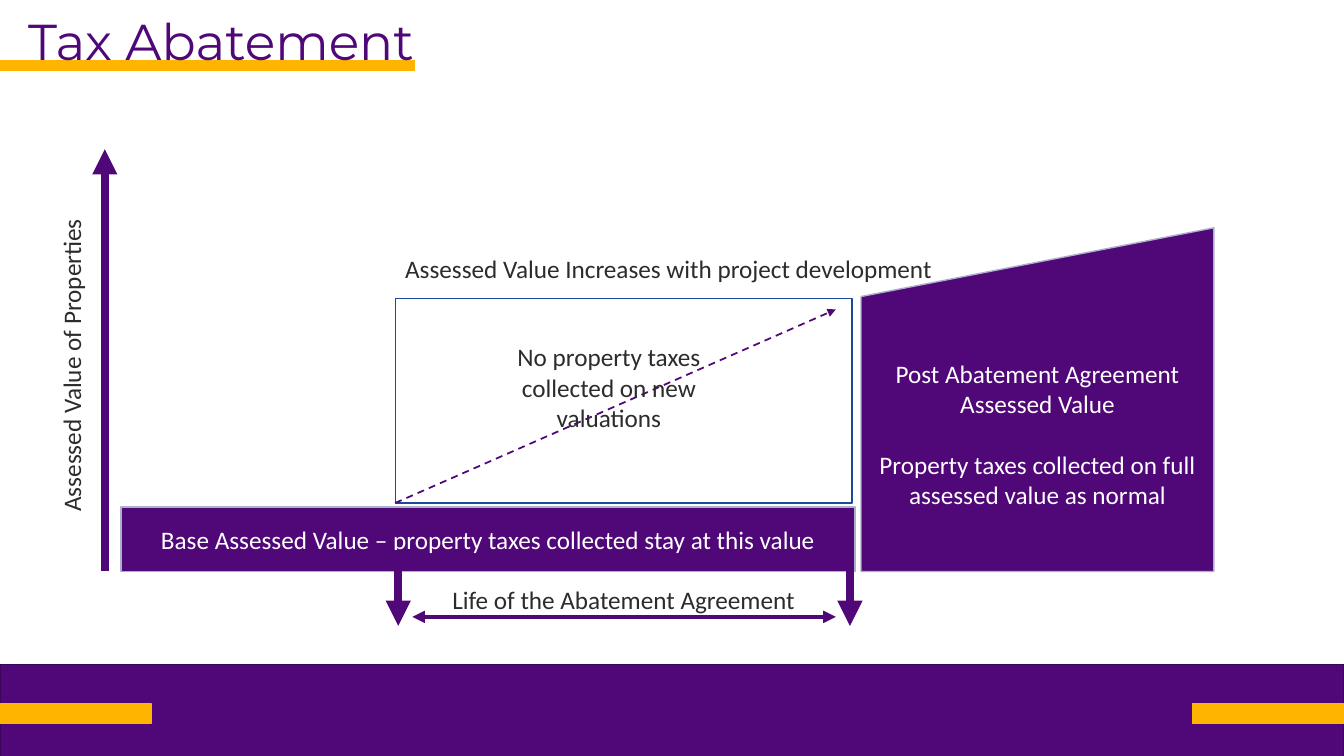
from dataclasses import dataclass

from lxml.etree import SubElement
from pptx import Presentation
from pptx.dml.color import RGBColor
from pptx.enum.dml import MSO_LINE
from pptx.enum.shapes import MSO_CONNECTOR, MSO_SHAPE
from pptx.enum.text import MSO_ANCHOR, PP_ALIGN
from pptx.oxml.ns import qn
from pptx.util import Inches, Pt


@dataclass(frozen=True)
class Theme:
    """Colours, fonts and type sizes of the slide."""

    purple: str = "500778"
    dark_purple: str = "3B0559"
    gold: str = "FFB500"
    pale_blue: str = "ABB1CC"
    blue: str = "1B499E"
    ink: str = "2C2C2C"
    white: str = "FFFFFF"
    title_font: str = "Montserrat"
    body_font: str = "Calibri"
    title_size: int = 36
    body_size: int = 18


class SlideBuilder:
    """Draws styled elements on one slide."""

    def __init__(self, slide, theme):
        """Keep the slide and its theme."""
        self.slide = slide
        self.theme = theme

    def set_text(self, text_frame, lines, color, align, font=None, size=None):
        """Fill a text frame with evenly styled paragraphs."""
        text_frame.word_wrap = True
        text_frame.text = "\n".join(lines)
        for paragraph in text_frame.paragraphs:
            paragraph.alignment = align
            for run in paragraph.runs:
                run.font.name = font or self.theme.body_font
                run.font.size = Pt(size or self.theme.body_size)
                run.font.color.rgb = RGBColor.from_string(color)

    def block(self, box, fill, line, lines=(), kind=MSO_SHAPE.RECTANGLE):
        """Add a preset shape with optional centred white text."""
        shape = self.slide.shapes.add_shape(kind, *map(Inches, box))
        shape.shadow.inherit = False
        if fill:
            shape.fill.solid()
            shape.fill.fore_color.rgb = RGBColor.from_string(fill)
        else:
            shape.fill.background()
        shape.line.color.rgb = RGBColor.from_string(line)
        shape.line.width = Pt(1)
        if lines:
            shape.text_frame.vertical_anchor = MSO_ANCHOR.MIDDLE
            self.set_text(shape.text_frame, lines, self.theme.white, PP_ALIGN.CENTER)
        return shape

    def label(self, box, text, align=PP_ALIGN.LEFT, rotation=0):
        """Add a body text box."""
        shape = self.slide.shapes.add_textbox(*map(Inches, box))
        shape.rotation = rotation
        self.set_text(shape.text_frame, [text], self.theme.ink, align)

    def title(self, box, text):
        """Add the slide heading."""
        shape = self.slide.shapes.add_textbox(*map(Inches, box))
        self.set_text(shape.text_frame, [text], self.theme.purple, PP_ALIGN.LEFT,
                      self.theme.title_font, self.theme.title_size)
        shape.text_frame.paragraphs[0].line_spacing = 0.9

    def arrow(self, start, end, width, dashed=False, both_ends=False):
        """Add a straight purple arrow."""
        connector = self.slide.shapes.add_connector(
            MSO_CONNECTOR.STRAIGHT, *map(Inches, (*start, *end)))
        connector.line.color.rgb = RGBColor.from_string(self.theme.purple)
        connector.line.width = Pt(width)
        if dashed:
            connector.line.dash_style = MSO_LINE.DASH
        properties = connector._element.spPr
        outline = properties.find(qn("a:ln"))
        for tag in ("a:headEnd", "a:tailEnd") if both_ends else ("a:tailEnd",):
            SubElement(outline, qn(tag), type="triangle")
        SubElement(properties, qn("a:effectLst"))


def main():
    """Build and save the tax abatement slide."""
    presentation = Presentation()
    presentation.slide_width = Inches(13.33)
    presentation.slide_height = Inches(7.5)
    slide = presentation.slides.add_slide(presentation.slide_layouts[6])
    theme = Theme()
    builder = SlideBuilder(slide, theme)

    builder.block((0, 6.59, 13.33, 0.98), theme.purple, theme.dark_purple)
    for accent in ((0, 6.98, 1.5, 0.2), (11.83, 6.98, 1.5, 0.2), (0, 0.6, 4.11, 0.1)):
        builder.block(accent, theme.gold, theme.gold)
    builder.title((0.18, 0.12, 11.5, 1.13), "Tax Abatement")

    builder.block((1.2, 5.03, 7.28, 0.64), theme.purple, theme.pale_blue,
                  ["Base Assessed Value – property taxes collected stay at this value"])
    builder.block((3.92, 2.96, 4.53, 2.03), None, theme.blue)
    post_abatement = builder.block(
        (8.54, 2.26, 3.5, 3.41), theme.purple, theme.pale_blue,
        ["Post Abatement Agreement Assessed Value",
         "Property taxes collected on full assessed value as normal"],
        MSO_SHAPE.FLOWCHART_MANUAL_INPUT)
    post_abatement.text_frame.paragraphs[1].space_before = Pt(22)

    builder.arrow((1.04, 5.66), (1.04, 1.48), 6)
    builder.label((-1.02, 3.25, 3.45, 0.4), "Assessed Value of Properties", rotation=270)
    builder.label((3.92, 2.46, 5.81, 0.4),
                  "Assessed Value Increases with project development")

    for agreement_limit in (3.95, 8.43):
        builder.arrow((agreement_limit, 5.46), (agreement_limit, 6.21), 6)
    builder.arrow((4.09, 6.12), (8.29, 6.12), 3, both_ends=True)
    builder.label((4.28, 5.75, 3.81, 0.4), "Life of the Abatement Agreement",
                  PP_ALIGN.CENTER)

    builder.arrow((3.92, 4.99), (8.29, 3.07), 1.25, dashed=True)
    builder.label((4.96, 3.34, 2.16, 1.01),
                  "No property taxes collected on new valuations", PP_ALIGN.CENTER)

    presentation.save("out.pptx")


if __name__ == "__main__":
    main()
